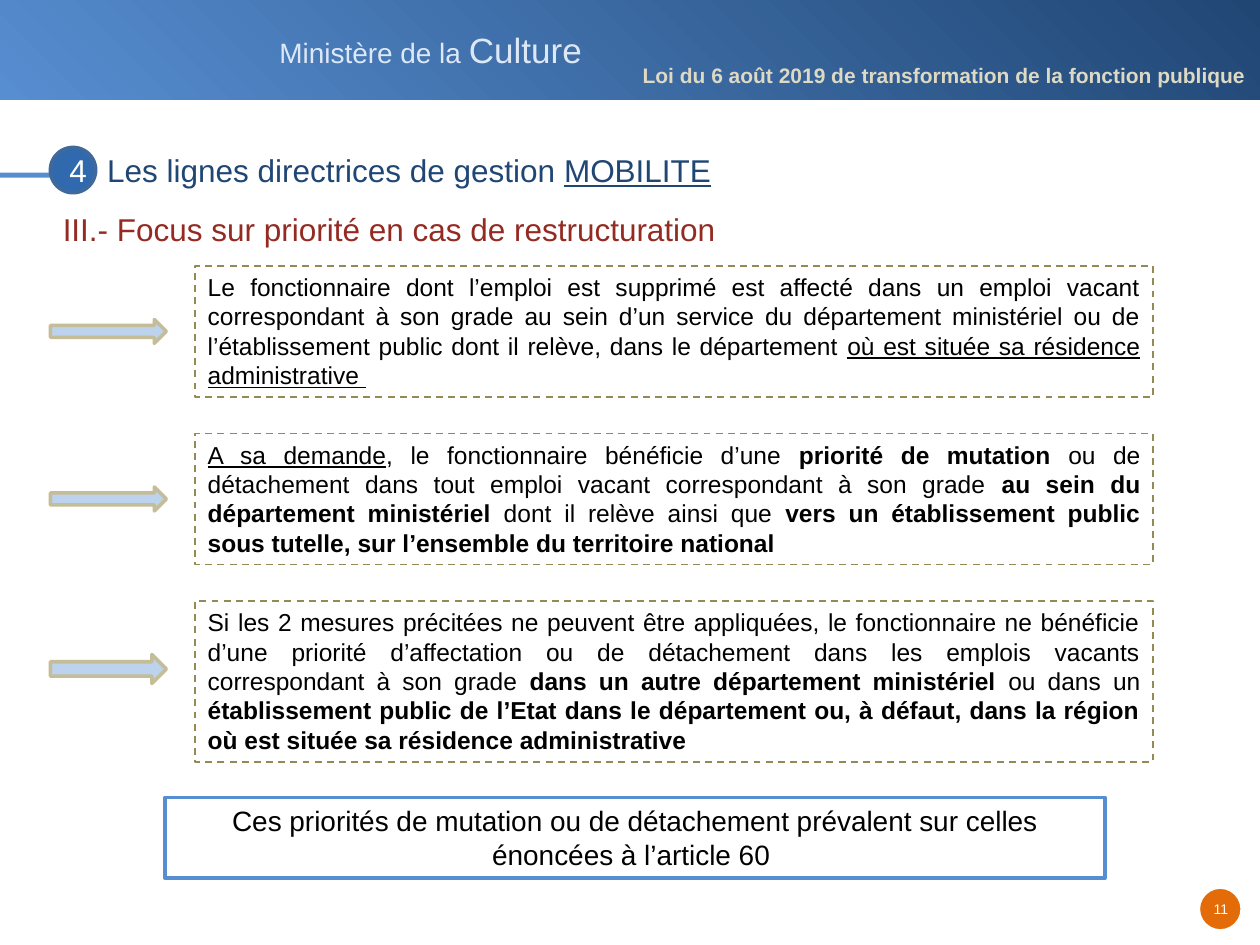
from pptx import Presentation
from pptx.dml.color import RGBColor
from pptx.enum.dml import MSO_LINE
from pptx.enum.shapes import MSO_SHAPE
from pptx.enum.text import MSO_ANCHOR, PP_ALIGN
from pptx.util import Inches, Pt

RECT, OVAL, ARROW = MSO_SHAPE.RECTANGLE, MSO_SHAPE.OVAL, MSO_SHAPE.RIGHT_ARROW
CENTER, JUSTIFY, LEFT = PP_ALIGN.CENTER, PP_ALIGN.JUSTIFY, PP_ALIGN.LEFT
TOP, MIDDLE = MSO_ANCHOR.TOP, MSO_ANCHOR.MIDDLE
DASH = MSO_LINE.DASH
COLS, ROWS = 100, 75
CELL = Inches(0.1)
NAVY, BLUE, WHITE, BLACK = "204674", "578ED1", "FFFFFF", "000000"
BOLD, UNDERLINE = {"bold": True}, {"underline": True}

MEASURES = [
    (10.4, 1.9, [
        ("Le fonctionnaire dont l’emploi est supprimé est affecté dans un emploi vacant "
         "correspondant à son grade au sein d’un service du département ministériel ou de "
         "l’établissement public dont il relève, dans le département ", {}),
        ("où est située sa résidence administrative ", UNDERLINE)]),
    (10.4, 1.9, [
        ("A sa demande", UNDERLINE),
        (", le fonctionnaire bénéficie d’une ", {}),
        ("priorité de mutation", BOLD),
        (" ou de détachement dans tout emploi vacant correspondant à son grade ", {}),
        ("au sein du département ministériel", BOLD),
        (" dont il relève ainsi que ", {}),
        ("vers un établissement public sous tutelle, sur l’ensemble du territoire "
         "national ", BOLD)]),
    (12.8, 2.3, [
        ("Si les 2 mesures précitées ne peuvent être appliquées, le fonctionnaire ne "
         "bénéficie d’une priorité d’affectation ou de détachement dans les emplois "
         "vacants correspondant à son grade ", {}),
        ("dans un autre département ministériel ", BOLD),
        ("ou dans un ", {}),
        ("établissement public de l’Etat dans le département ou, à défaut, dans la région "
         "où est située sa résidence administrative ", BOLD)]),
]


def rgb(value):
    """Turn a hex string into a colour."""
    return RGBColor.from_string(value)


def grid(*cells):
    """Turn grid columns and rows into lengths."""
    return [round(c * CELL) for c in cells]


def write(sp, runs, size=14, color=BLACK, align=LEFT, anchor=TOP, wrap=True,
          margin=None, spacing=None, after=None):
    """Write one paragraph of formatted runs into a shape."""
    tf = sp.text_frame
    tf.word_wrap = wrap
    tf.vertical_anchor = anchor
    if margin is not None:
        tf.margin_left = tf.margin_right = tf.margin_top = tf.margin_bottom = margin
    p = tf.paragraphs[0]
    p.alignment = align
    if spacing is not None:
        p.line_spacing = spacing
    if after is not None:
        p.space_after = after
    for text, style in [(runs, {})] if isinstance(runs, str) else runs:
        r = p.add_run()
        r.text = text
        r.font.name = "Arial"
        r.font.size = Pt(style.get("size", size))
        r.font.color.rgb = rgb(color)
        r.font.bold = style.get("bold", False)
        r.font.underline = style.get("underline", False)


def add_text(s, box, runs, **fmt):
    """Add a text box on the grid."""
    write(s.shapes.add_textbox(*grid(*box)), runs, **fmt)


def add_shape(s, kind, box, fill=None, line=None, width=2, dash=None):
    """Add a flat preset shape on the grid."""
    sp = s.shapes.add_shape(kind, *grid(*box))
    sp.shadow.inherit = False
    if fill:
        sp.fill.solid()
        sp.fill.fore_color.rgb = rgb(fill)
    else:
        sp.fill.background()
    if line:
        sp.line.color.rgb = rgb(line)
        sp.line.width = Pt(width)
        sp.line.dash_style = dash
    else:
        sp.line.fill.background()
    return sp


def add_banner(s, x, y, w, h):
    """Draw the gradient banner with the ministry and the law."""
    sp = add_shape(s, RECT, (x, y, w, h))
    sp.fill.gradient()
    sp.fill.gradient_angle = 225
    for stop, color in zip(sp.fill.gradient_stops, (NAVY, BLUE)):
        stop.color.rgb = rgb(color)
    for stop, position in zip(sp.fill.gradient_stops, (0, 1)):
        stop.position = position
    add_text(s, (x + 21.2, y + 1.8, 26.3, 4.4),
             [("Ministère de la ", {}), ("Culture", {"size": 20})],
             size=16, color="DDE8F6", wrap=False)
    add_text(s, (x + 51, y + 5.3, 48.5, 1.7),
             [("Loi du 6 août 2019 de transformation de la fonction publique", BOLD)],
             size=12, color="DDD9C3", wrap=False, margin=0, spacing=0.85, after=Pt(6))


def add_heading(s, x, y, w, h):
    """Place the numbered title and the subtitle below it."""
    title = s.shapes.title
    title.left, title.top, title.width, title.height = grid(x + 7.5, y, w - 9.3, h)
    write(title, [("Les lignes directrices de gestion ", {}), ("MOBILITE", UNDERLINE)],
          size=18, color=NAVY, spacing=Pt(28))
    add_shape(s, RECT, (x, y + 3.1, 6.8, 0.4), BLUE)
    number = add_shape(s, OVAL, (x + 4, y + 1.1, 3.6, 3.6), "3069AE", "40699B")
    write(number, "4", size=18, color=WHITE, align=CENTER, anchor=MIDDLE)
    add_text(s, (x + 4, y + 5.6, 76.6, 4),
             "III.- Focus sur priorité en cas de restructuration", size=18, color="932B23")


def add_measure(s, x, y, w, h, thickness, runs):
    """Draw an arrow and the dashed box it points to."""
    add_shape(s, ARROW, (x, y + 4.25, 9.2, thickness), "BCD2ED", "C4BD97")
    sp = add_shape(s, RECT, (x + 11.5, y, w - 11.5, h), None, "948A54", 1, DASH)
    write(sp, runs, align=JUSTIFY)


def add_conclusion(s, *box):
    """Draw the framed conclusion."""
    sp = add_shape(s, RECT, box, WHITE, BLUE)
    write(sp, "Ces priorités de mutation ou de détachement prévalent sur celles "
              "énoncées à l’article 60 ", size=16, align=CENTER)


def add_page_number(s, x, y, side):
    """Draw the page number in its disc."""
    add_shape(s, OVAL, (x, y, side, side), "E36C09", WHITE, 0.75)
    add_text(s, (x + 0.2, y + 0.5, side - 0.3, 2.3), "11", size=8, color=WHITE,
             align=CENTER, wrap=False, margin=Inches(0.05))


def main():
    """Build the slide and save it."""
    prs = Presentation()
    prs.slide_width, prs.slide_height = grid(COLS, ROWS)
    s = prs.slides.add_slide(prs.slide_layouts[5])
    add_banner(s, 0, 0, COLS, 7.9)
    add_heading(s, 0, 10.6, COLS, 4.7)
    for i, (height, thickness, runs) in enumerate(MEASURES):
        add_measure(s, 4, 21.1 + 13.3 * i, 87.5, height, thickness, runs)
    add_conclusion(s, 13.1, 63.3, 74.6, 6.4)
    add_page_number(s, 95.2, 70.5, 3.3)
    prs.save("out.pptx")


if __name__ == "__main__":
    main()
